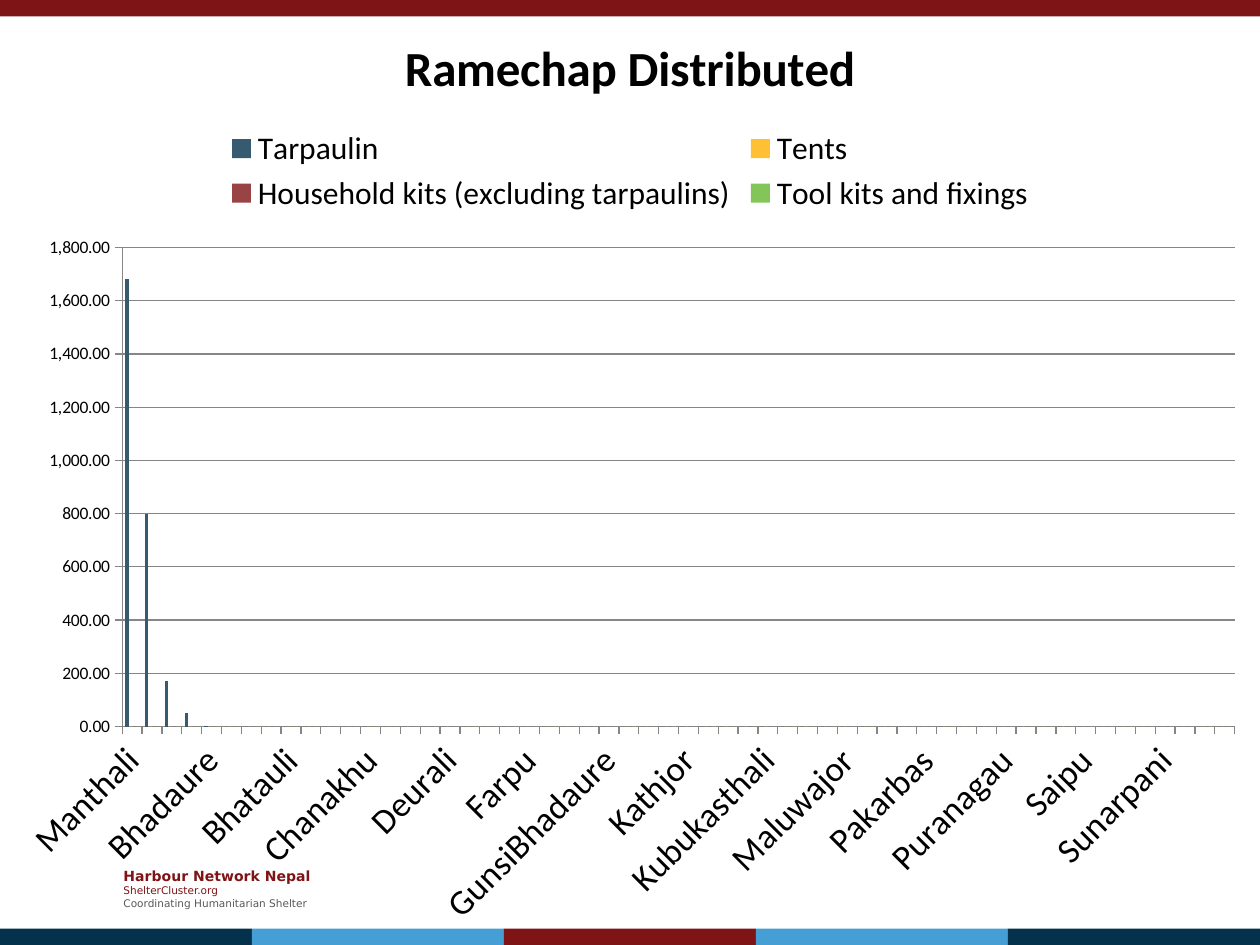
import pptx
import pptx.chart.data
import pptx.dml.color
import pptx.enum.chart
import pptx.enum.shapes
import pptx.enum.text
import pptx.oxml
import pptx.oxml.ns
import pptx.util
from pptx.util import Cm

SLIDE_WIDTH, SLIDE_HEIGHT = 25.4, 19.05
BAND_HEIGHT = 0.33
RED, NAVY, BLUE, GREY = "7F1416", "04314C", "459FD5", "595959"
LINE_GREY = "868686"

VILLAGES = """Manthali Ramechhap TBD Gumdel Bhadaure BamtiBhandar Betali Bethan
Bhatauli Bhirpani Bhujee Bijulikot Chanakhu Chisapani Chuchure Dadhuwa Deurali
Dimipokhari Doramba Duragau Farpu Gelu Goswara Gothgau GunsiBhadaure Guptesor
Hiledevi Himganga Kathjor Khadadevi Khaniyapani Khimti Kubukasthali Lakhanpur
Majuwa Makadum Maluwajor NagaDaha Namadi Okhreni Pakarbas Phulasi Pinkhuri
Pritee Puranagau Rakathum Rampur Rasanalu Saipu Salupati Sanghutar Sukajor
Sunarpani Those Tilpung Tokarpur""".split()

SERIES = [
    ("Tarpaulin", "365A70", [1680, 800, 170, 50, 3]),
    ("Tents", "FFC133", []),
    ("Household kits (excluding tarpaulins)", "994345", []),
    ("Tool kits and fixings", "84C559", []),
]

FOOTER = [
    ("Harbour Network Nepal", 8, RED, True),
    ("ShelterCluster.org", 6, RED, False),
    ("Coordinating Humanitarian Shelter", 6, GREY, False),
]


def color(value):
    return pptx.dml.color.RGBColor.from_string(value)


def set_font(font, name, size, value, bold=False):
    font.name = name
    font.size = pptx.util.Pt(size)
    font.color.rgb = color(value)
    font.bold = bold


def add_band(slide, left, top, width, fill):
    shape = slide.shapes.add_shape(
        pptx.enum.shapes.MSO_SHAPE.RECTANGLE,
        Cm(left), Cm(top), Cm(width), Cm(BAND_HEIGHT))
    shape.shadow.inherit = False
    shape.fill.solid()
    shape.fill.fore_color.rgb = color(fill)
    shape.line.fill.background()


def add_footer(slide):
    frame = slide.shapes.add_textbox(Cm(2.24), Cm(17.35), Cm(4.4), Cm(1.12)).text_frame
    frame.word_wrap = True
    frame.vertical_anchor = pptx.enum.text.MSO_ANCHOR.MIDDLE
    for index, (text, size, value, bold) in enumerate(FOOTER):
        paragraph = frame.add_paragraph() if index else frame.paragraphs[0]
        paragraph.text = text
        set_font(paragraph.font, "DejaVu Sans", size, value, bold)


def clear_background(chart):
    namespace = pptx.oxml.ns.nsdecls("c", "a")
    properties = pptx.oxml.parse_xml(
        f"<c:spPr {namespace}><a:noFill/><a:ln><a:noFill/></a:ln></c:spPr>")
    chart.element.find(pptx.oxml.ns.qn("c:chart")).addnext(properties)


def place_plot(chart, x, y, w, h):
    plot_area = chart.element.find(".//" + pptx.oxml.ns.qn("c:plotArea"))
    previous = plot_area.find(pptx.oxml.ns.qn("c:layout"))
    if previous is not None:
        plot_area.remove(previous)
    sizes = "".join(f'<c:{key} val="{value}"/>'
                    for key, value in (("x", x), ("y", y), ("w", w), ("h", h)))
    plot_area.insert(0, pptx.oxml.parse_xml(
        f'<c:layout {pptx.oxml.ns.nsdecls("c")}><c:manualLayout>'
        '<c:layoutTarget val="inner"/><c:xMode val="edge"/><c:yMode val="edge"/>'
        f"{sizes}</c:manualLayout></c:layout>"))


def style_axes(chart):
    for axis, size in ((chart.category_axis, 20), (chart.value_axis, 10)):
        axis.major_tick_mark = pptx.enum.chart.XL_TICK_MARK.OUTSIDE
        axis.minor_tick_mark = pptx.enum.chart.XL_TICK_MARK.NONE
        axis.format.line.color.rgb = color(LINE_GREY)
        set_font(axis.tick_labels.font, "Calibri", size, "000000")
    chart.category_axis.has_major_gridlines = False
    labels = chart.category_axis._element.find(pptx.oxml.ns.qn("c:txPr"))
    labels.find(pptx.oxml.ns.qn("a:bodyPr")).set("rot", "-2700000")
    values = chart.value_axis
    values.has_major_gridlines = True
    values.major_gridlines.format.line.color.rgb = color(LINE_GREY)
    values.tick_labels.number_format = "#,##0.00"
    values.tick_labels.number_format_is_linked = False


def add_distribution_chart(slide):
    data = pptx.chart.data.CategoryChartData()
    data.categories = VILLAGES
    for name, _, values in SERIES:
        data.add_series(name, values + [0] * (len(VILLAGES) - len(values)))
    chart = slide.shapes.add_chart(
        pptx.enum.chart.XL_CHART_TYPE.COLUMN_CLUSTERED,
        Cm(0), Cm(0), Cm(SLIDE_WIDTH), Cm(SLIDE_HEIGHT), data).chart
    clear_background(chart)
    set_font(chart.font, "Calibri", 10, "000000")
    chart.has_title = True
    title = chart.chart_title.text_frame.paragraphs[0]
    title.text = "Ramechap Distributed"
    set_font(title.font, "Calibri", 28, "000000", True)
    chart.has_legend = True
    chart.legend.position = pptx.enum.chart.XL_LEGEND_POSITION.TOP
    chart.legend.include_in_layout = False
    set_font(chart.legend.font, "Calibri", 18, "000000")
    style_axes(chart)
    place_plot(chart, 0.097, 0.262, 0.883, 0.507)
    plot = chart.plots[0]
    plot.gap_width = 150
    plot.vary_by_categories = False
    for series, (_, fill, _) in zip(plot.series, SERIES):
        series.invert_if_negative = False
        series.format.fill.solid()
        series.format.fill.fore_color.rgb = color(fill)


def main():
    """Build the slide on relief items distributed in Ramechap."""
    presentation = pptx.Presentation()
    presentation.slide_width = Cm(SLIDE_WIDTH)
    presentation.slide_height = Cm(SLIDE_HEIGHT)
    slide = presentation.slides.add_slide(presentation.slide_layouts[6])
    add_footer(slide)
    add_band(slide, 0, 0, SLIDE_WIDTH, RED)
    band_width = SLIDE_WIDTH / 5
    for index, fill in enumerate((NAVY, BLUE, RED, BLUE, NAVY)):
        add_band(slide, index * band_width, SLIDE_HEIGHT - BAND_HEIGHT, band_width, fill)
    add_distribution_chart(slide)
    presentation.save("out.pptx")


if __name__ == "__main__":
    main()
